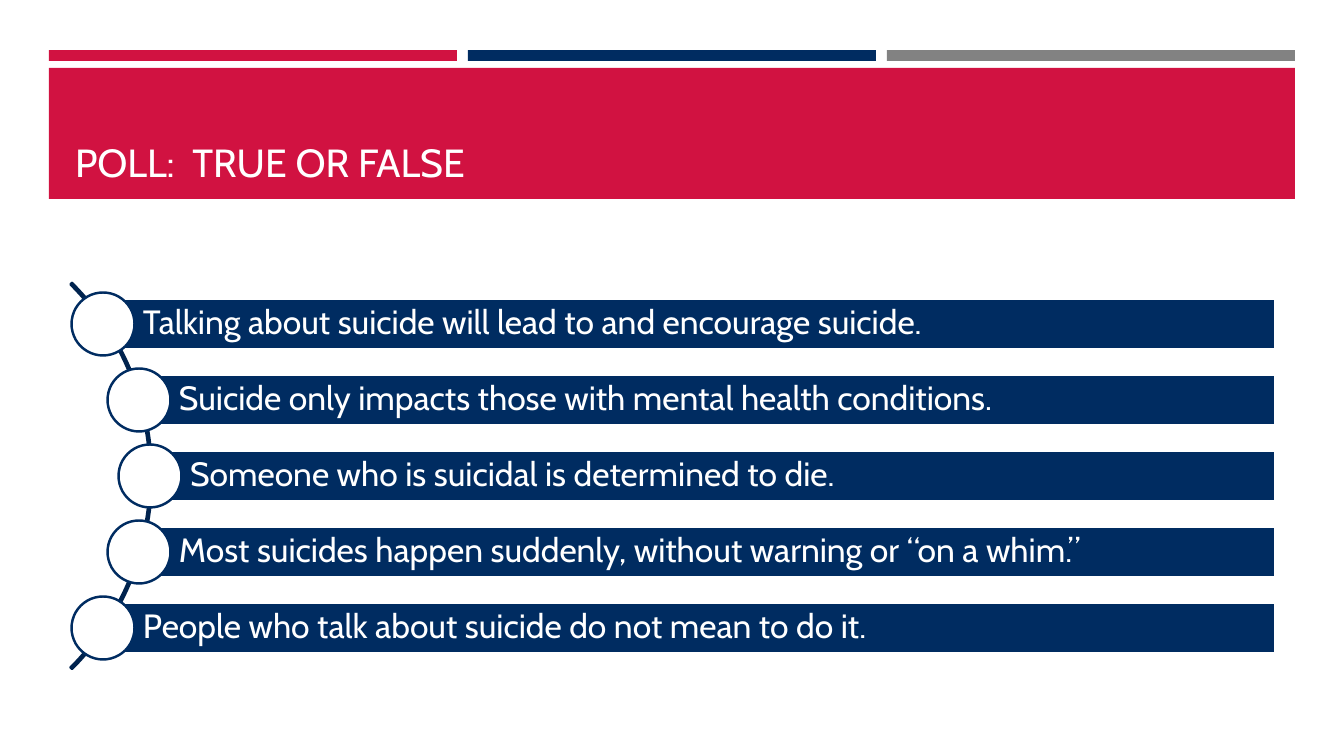
from math import sqrt

from pptx import Presentation
from pptx.dml.color import RGBColor
from pptx.enum.shapes import MSO_SHAPE as SHAPE
from pptx.enum.text import MSO_ANCHOR as ANCHOR, MSO_AUTO_SIZE as AUTO, PP_ALIGN as ALIGN
from pptx.util import Pt

PX = 9071  # EMU per px
RED = RGBColor(0xD1, 0x12, 0x41)
NAVY = RGBColor(0x00, 0x2C, 0x61)
DARK_NAVY = RGBColor(0x00, 0x23, 0x4E)
GRAY = RGBColor(0x82, 0x82, 0x82)
WHITE = RGBColor(0xFF, 0xFF, 0xFF)

ARC_X, ARC_Y, ARC_RADIUS = -121, 476, 273
DOT_ORBIT, DOT_SIZE = 271, 63
BAR_RIGHT, BAR_HEIGHT, BAR_PITCH = 1275, 50, 76

STATEMENTS = [
    "Talking about suicide will lead to and encourage suicide.",
    "Suicide only impacts those with mental health conditions.",
    "Someone who is suicidal is determined to die.",
    "Most suicides happen suddenly, without warning or “on a whim.”",
    "People who talk about suicide do not mean to do it.",
]


def add_figure(s, kind, x, y, w, h, fill=None, line=None):
    sp = s.shapes.add_shape(kind, *(round(v * PX) for v in (x, y, w, h)))
    sp.shadow.inherit = False
    if fill is None:
        sp.fill.background()
    else:
        sp.fill.solid()
        sp.fill.fore_color.rgb = fill
    if line is None:
        sp.line.fill.background()
    else:
        sp.line.color.rgb = line
        sp.line.width = Pt(1.75)
    return sp


def write_text(sp, text, size, anchor, insets=(10, 5, 10, 5), spacing=1.0):
    """Set one left-aligned paragraph; insets are left, top, right, bottom in px."""
    tf = sp.text_frame
    tf.word_wrap = True
    tf.auto_size = AUTO.NONE
    tf.vertical_anchor = anchor
    tf.margin_left, tf.margin_top, tf.margin_right, tf.margin_bottom = (
        v * PX for v in insets)
    p = tf.paragraphs[0]
    p.alignment = ALIGN.LEFT
    p.line_spacing = spacing
    r = p.add_run()
    r.text = text
    r.font.name = "Cabin"
    r.font.size = Pt(size)
    r.font.color.rgb = WHITE


def add_header(s, text):
    for i, color in enumerate((RED, NAVY, GRAY)):
        add_figure(s, SHAPE.RECTANGLE, 49 + i * 419, 50, 408, 11, fill=color)
    add_figure(s, SHAPE.RECTANGLE, 49, 68, 1246, 131, fill=RED)
    title = s.shapes.title
    title.left, title.top, title.width, title.height = (
        v * PX for v in (65, 78, 1216, 112))
    write_text(title, text, 28, ANCHOR.BOTTOM)
    s.shapes.element.append(title.element)  # bring in front of the red band


def add_arc(s):
    arc = add_figure(s, SHAPE.BLOCK_ARC, ARC_X - ARC_RADIUS, ARC_Y - ARC_RADIUS,
                     2 * ARC_RADIUS, 2 * ARC_RADIUS, line=DARK_NAVY)
    for i, value in enumerate((189, 27, 0.004)):
        arc.adjustments[i] = value


def add_statement(s, text, offset):
    """Add a bar and its dot, offset px below the middle of the arc."""
    x = round(ARC_X + sqrt(DOT_ORBIT ** 2 - offset ** 2))
    y = ARC_Y + offset
    bar = add_figure(s, SHAPE.RECTANGLE, x, y - BAR_HEIGHT / 2,
                     BAR_RIGHT - x, BAR_HEIGHT, fill=NAVY, line=WHITE)
    write_text(bar, text, 24, ANCHOR.MIDDLE, insets=(40, 7, 7, 7), spacing=0.9)
    add_figure(s, SHAPE.OVAL, x - DOT_SIZE / 2, y - DOT_SIZE / 2,
               DOT_SIZE, DOT_SIZE, fill=WHITE, line=NAVY)


def main():
    prs = Presentation()
    prs.slide_width, prs.slide_height = 1344 * PX, 756 * PX
    s = prs.slides.add_slide(prs.slide_layouts[5])
    add_header(s, "POLL:  TRUE OR FALSE")
    add_arc(s)
    for i, text in enumerate(STATEMENTS):
        add_statement(s, text, (i - len(STATEMENTS) // 2) * BAR_PITCH)
    prs.save("out.pptx")


if __name__ == "__main__":
    main()
